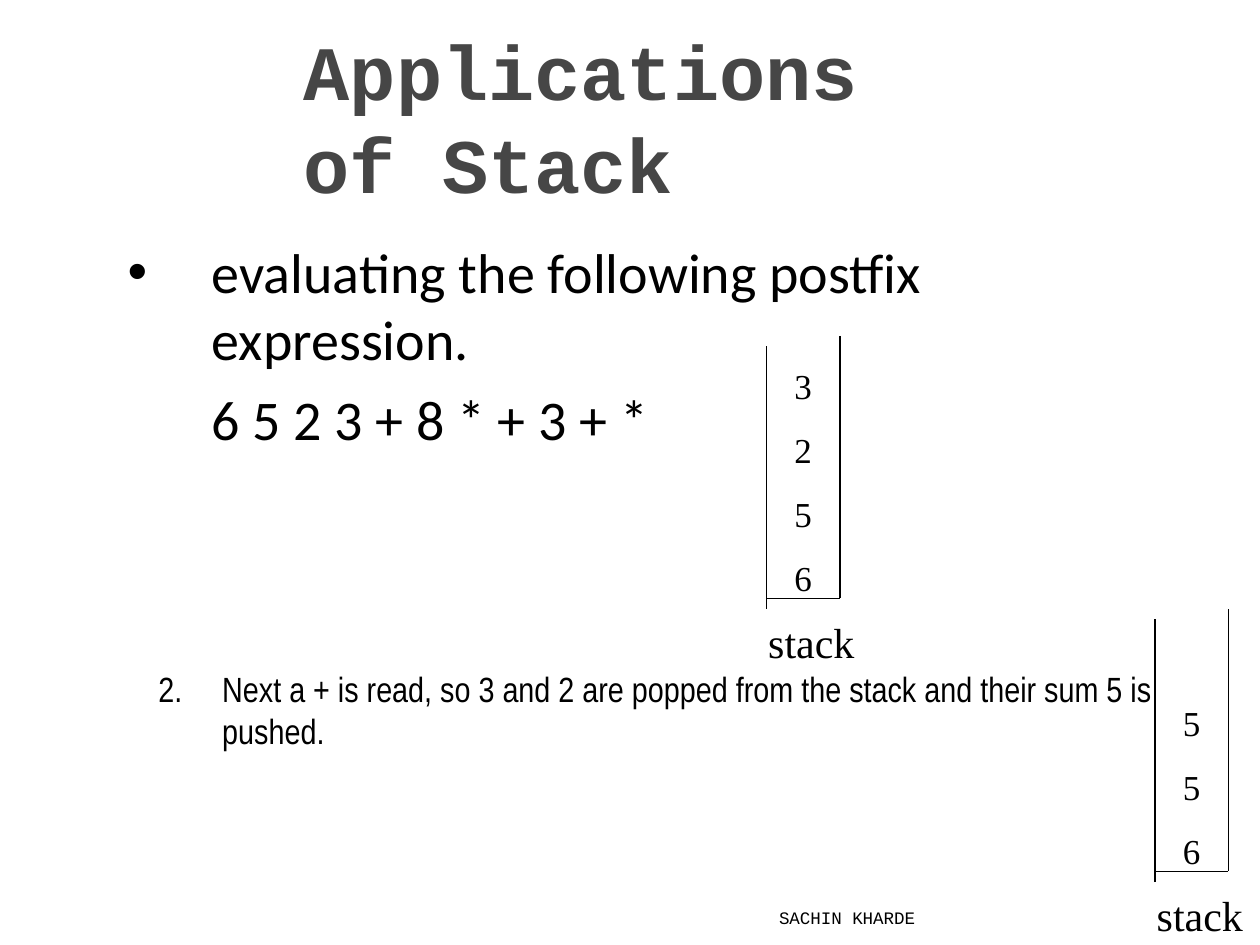
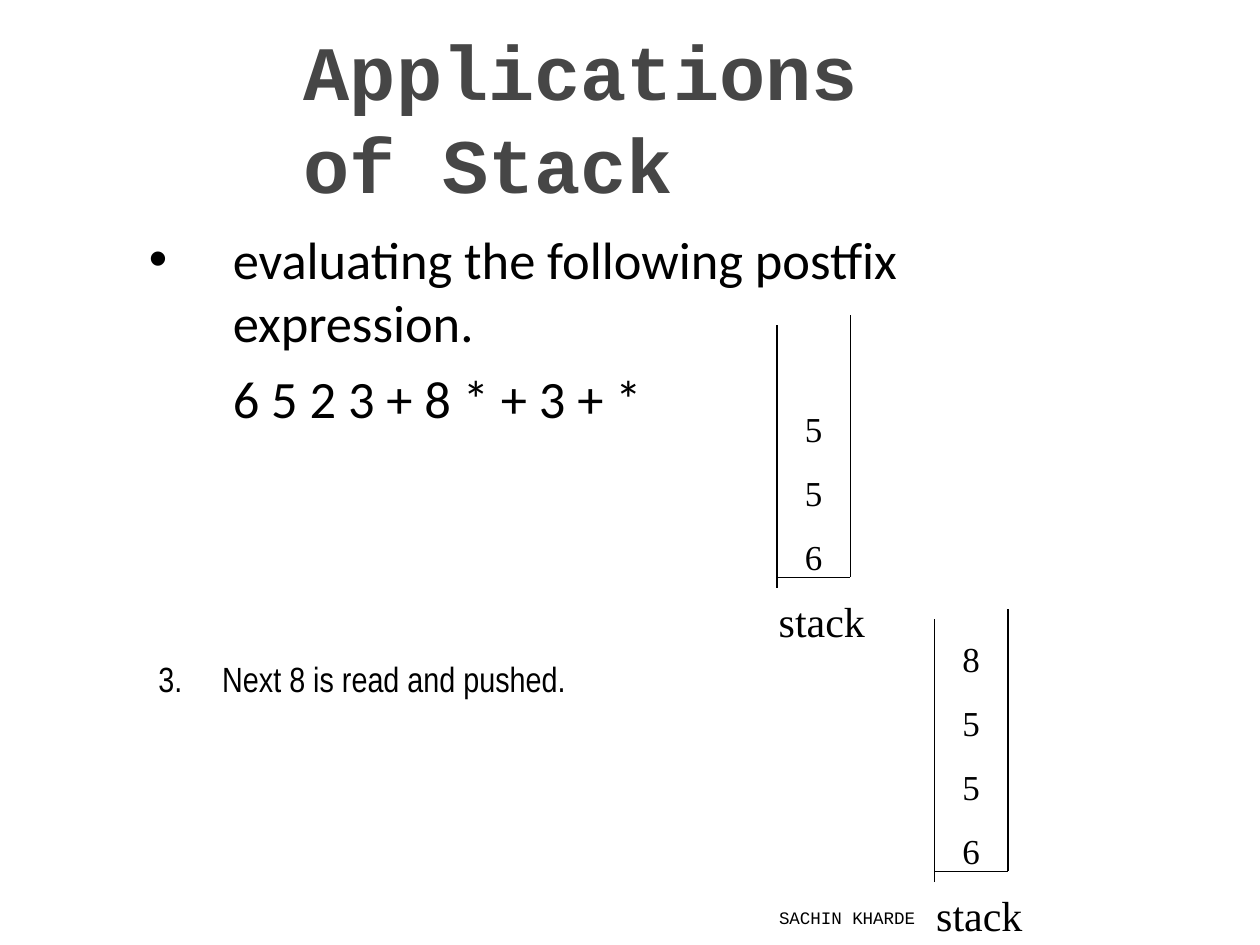
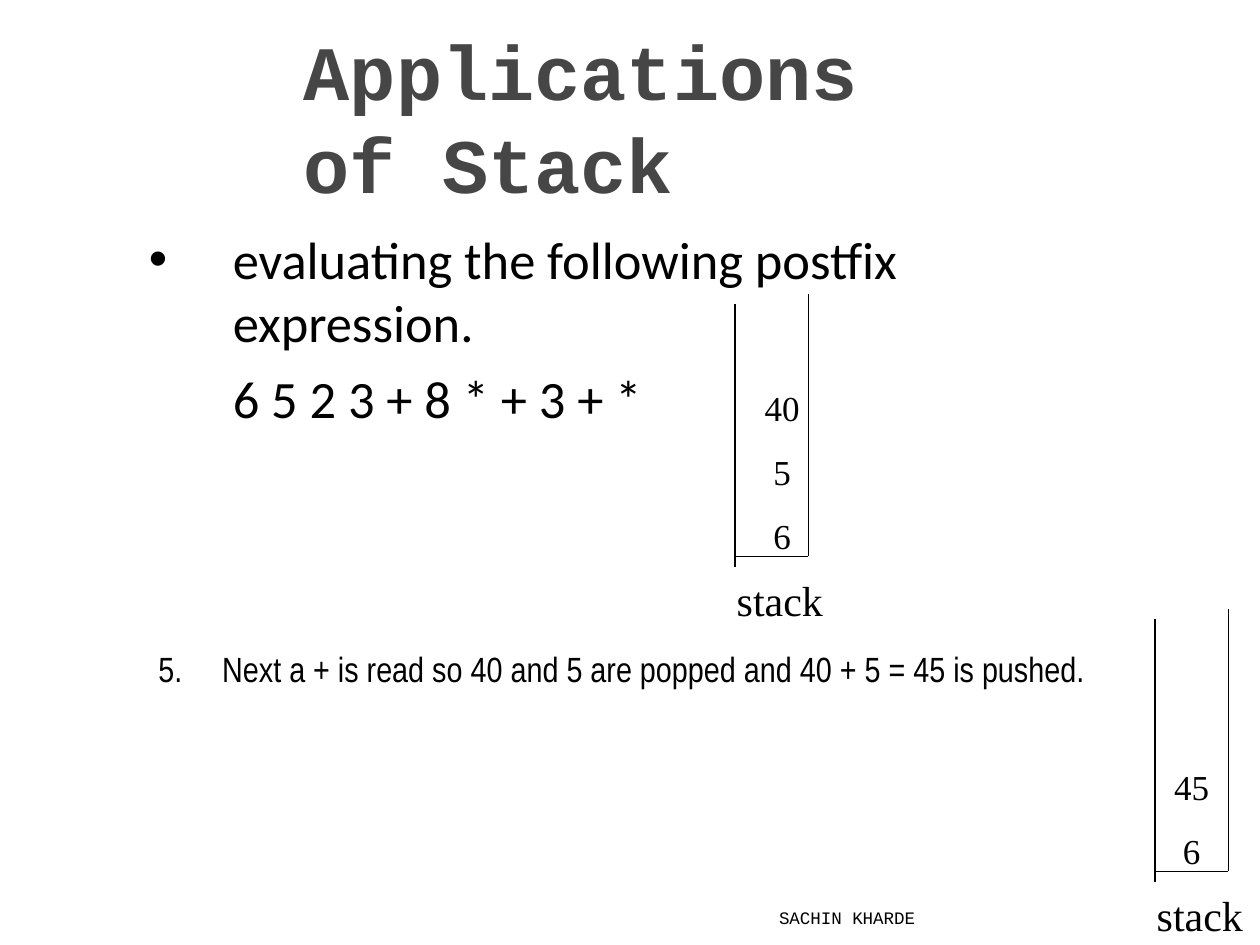
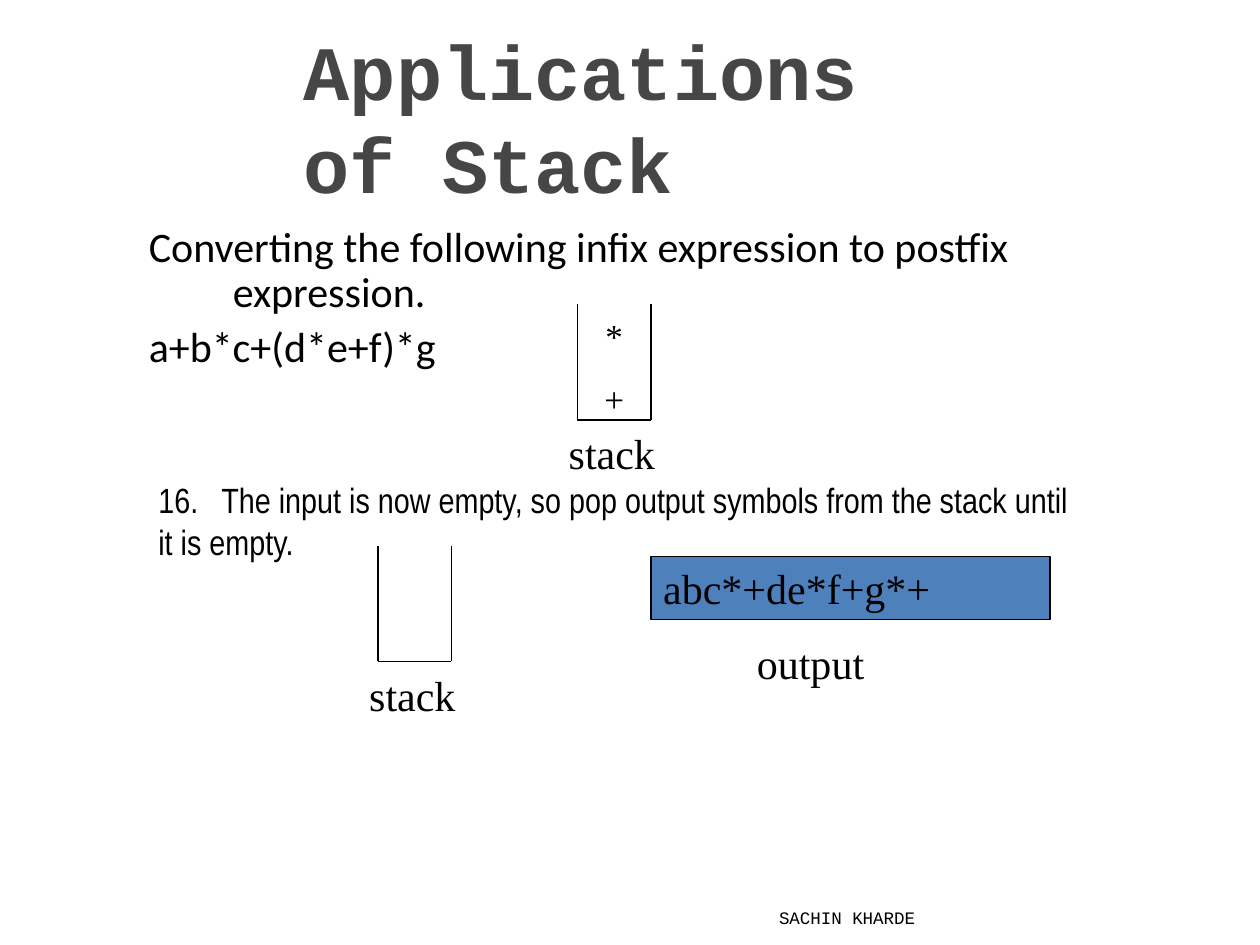
from dataclasses import dataclass

from lxml import etree
from pptx import Presentation
from pptx.dml.color import RGBColor
from pptx.enum.shapes import MSO_SHAPE as Preset
from pptx.enum.text import MSO_ANCHOR as Anchor, MSO_AUTO_SIZE as AutoSize, PP_ALIGN as Align
from pptx.oxml.ns import qn
from pptx.util import Pt


@dataclass(frozen=True)
class Theme:
    ink: RGBColor = RGBColor(0x00, 0x00, 0x00)
    heading: RGBColor = RGBColor(0x46, 0x46, 0x46)
    output_fill: RGBColor = RGBColor(0x4E, 0x80, 0xBC)
    mono: str = "Courier New"
    body: str = "Calibri"
    step: str = "Arial Narrow"
    diagram: str = "Times New Roman"
    title_size: int = 44
    label_size: int = 24
    item_size: int = 20
    footer_size: int = 10
    line: float = 0.75


THEME = Theme()
TITLE = "Applications of Stack"
AUTHOR = "SACHIN KHARDE"
POSTFIX_TASK = ["evaluating the following postfix expression.", "6 5 2 3 + 8 * + 3 + *"]
INFIX_TASK = ["Converting the following infix expression to postfix expression.", "a+b*c+(d*e+f)*g"]
HANGING = 48
STEP_TAB = 36.5
STACK_WIDTH = 42
ITEM_GAP = 12.5
FOOT = 6


def place(shape, left, top, width, height):
    shape.left, shape.top, shape.width, shape.height = map(Pt, (left, top, width, height))


def prepare_frame(frame, anchor=Anchor.TOP, inset=0):
    frame.word_wrap = True
    frame.auto_size = AutoSize.NONE
    frame.vertical_anchor = anchor
    frame.margin_left = frame.margin_right = Pt(inset)
    frame.margin_top = frame.margin_bottom = Pt(inset / 2)


def format_runs(paragraph, font_name, size, color=THEME.ink, bold=False):
    for run in paragraph.runs:
        run.font.name = font_name
        run.font.size = Pt(size)
        run.font.color.rgb = color
        run.font.bold = bold


def set_indent(paragraph, margin, first_line):
    properties = paragraph._p.get_or_add_pPr()
    properties.set("marL", str(Pt(margin)))
    properties.set("indent", str(Pt(first_line)))
    return properties


def add_label(slide, text, box, font_name, size, align=Align.LEFT, anchor=Anchor.TOP, inset=0):
    """Add a text box with one paragraph per line of text; return its paragraphs."""
    label = slide.shapes.add_textbox(*map(Pt, box))
    prepare_frame(label.text_frame, anchor, inset)
    label.text_frame.text = text
    for paragraph in label.text_frame.paragraphs:
        paragraph.alignment = align
        format_runs(paragraph, font_name, size)
    return label.text_frame.paragraphs


def add_titled_slide(prs):
    slide = prs.slides.add_slide(prs.slide_layouts[1])
    title = slide.shapes.title
    place(title, 173.5, 39, 373, 55)
    frame = title.text_frame
    prepare_frame(frame, Anchor.MIDDLE)
    frame.auto_size = AutoSize.SHAPE_TO_FIT_TEXT
    frame.text = TITLE
    frame.paragraphs[0].alignment = Align.LEFT
    format_runs(frame.paragraphs[0], THEME.mono, THEME.title_size, THEME.heading, bold=True)
    add_label(slide, AUTHOR, (345, 505, 185, 29), THEME.mono, THEME.footer_size,
              Align.RIGHT, Anchor.BOTTOM, inset=7.2)
    return slide


def fill_task(slide, lines, box, size, gap, bulleted=True, spacing=1.0):
    """Write the task and its expression; only a bulleted task starts with a bullet."""
    body = slide.placeholders[1]
    place(body, *box)
    prepare_frame(body.text_frame)
    body.text_frame.text = "\n".join(lines)
    for index, paragraph in enumerate(body.text_frame.paragraphs):
        paragraph.space_before = Pt(gap if index else 0)
        paragraph.line_spacing = spacing
        hangs = index == 0 or not bulleted
        properties = set_indent(paragraph, HANGING, -HANGING if hangs else 0)
        if index or not bulleted:
            etree.SubElement(properties, qn("a:buNone"))
        format_runs(paragraph, THEME.body, size)


def add_step(slide, number, text, top, width=568, hanging=True):
    [step] = add_label(slide, f"{number}.\t{text}", (90.5, top, width, 50),
                       THEME.step, THEME.item_size)
    margin = STEP_TAB if hanging else 0
    properties = set_indent(step, margin, -margin)
    tabs = etree.SubElement(properties, qn("a:tabLst"))
    etree.SubElement(tabs, qn("a:tab"), pos=str(Pt(STEP_TAB)), algn="l")


def add_stack(slide, left, top, items, height=150, foot=FOOT, item_shift=0):
    """Draw an open stack, its items from top to bottom, and its label.

    foot is how far the left wall sits below the right one.
    """
    right, base = left + STACK_WIDTH, top + height
    walls = [((left, base), (right, base)),
             ((right, top), (right, base)),
             ((left, base + foot), (left, top + foot))]
    outline = slide.shapes.build_freeform(Pt(left), Pt(base), scale=1.0)
    for start, end in walls:
        outline.move_to(*map(Pt, start))
        outline.add_line_segments([tuple(map(Pt, end))], close=False)
    stack = outline.convert_to_shape()
    stack.shadow.inherit = False
    stack.fill.background()
    stack.line.color.rgb = THEME.ink
    stack.line.width = Pt(THEME.line)

    if items:
        entries = add_label(slide, "\n".join(items), (left + item_shift, top, STACK_WIDTH, height),
                            THEME.diagram, THEME.item_size, Align.CENTER, Anchor.BOTTOM)
        for entry in entries[1:]:
            entry.space_before = Pt(ITEM_GAP)
    add_label(slide, "stack", (left + foot - 5, base + foot + 4.5, 52, 30),
              THEME.diagram, THEME.label_size)


def add_output(slide, text):
    output = slide.shapes.add_shape(Preset.RECTANGLE, Pt(372), Pt(318), Pt(228), Pt(36))
    output.shadow.inherit = False
    output.fill.solid()
    output.fill.fore_color.rgb = THEME.output_fill
    output.line.color.rgb = THEME.ink
    output.line.width = Pt(THEME.line)
    prepare_frame(output.text_frame, Anchor.MIDDLE, inset=7)
    output.text_frame.text = text
    output.text_frame.paragraphs[0].alignment = Align.LEFT
    format_runs(output.text_frame.paragraphs[0], THEME.diagram, THEME.label_size)
    add_label(slide, "output", (432.5, 364.5, 64, 30), THEME.diagram, THEME.label_size)


def build_addition(prs):
    slide = add_titled_slide(prs)
    fill_task(slide, POSTFIX_TASK, (73, 135.5, 480, 125), size=32, gap=7.5)
    add_stack(slide, 438, 192, "3256")
    add_step(slide, 2, "Next a + is read, so 3 and 2 are popped from the stack "
                       "and their sum 5 is pushed.", top=381.5)
    add_stack(slide, 660, 348, "556")


def build_push(prs):
    slide = add_titled_slide(prs)
    fill_task(slide, POSTFIX_TASK, (85, 129.5, 480, 118), size=30, gap=7.5)
    add_stack(slide, 444, 180, "556")
    add_step(slide, 3, "Next 8 is read and pushed.", top=376)
    add_stack(slide, 534, 348, "8556")


def build_second_addition(prs):
    slide = add_titled_slide(prs)
    fill_task(slide, POSTFIX_TASK, (85, 129.5, 480, 118), size=30, gap=7.5)
    add_stack(slide, 420, 168, ["40", "5", "6"], item_shift=6)
    add_step(slide, 5, "Next a + is read so 40 and 5 are popped and 40 + 5 = 45 is pushed.",
             top=370)
    add_stack(slide, 660, 348, ["45", "6"])


def build_conversion(prs):
    slide = add_titled_slide(prs)
    fill_task(slide, INFIX_TASK, (85, 130, 520, 90), size=24, gap=6, bulleted=False, spacing=0.88)
    add_stack(slide, 330, 174, "*+", height=66, foot=0)
    add_step(slide, 16, "The input is now empty, so pop output symbols from the stack "
                        "until it is empty.", top=273.5, width=525, hanging=False)
    add_stack(slide, 216, 312, "", height=66, foot=0)
    add_output(slide, "abc*+de*f+g*+")


def main():
    prs = Presentation()
    prs.slide_width, prs.slide_height = Pt(720), Pt(540)
    build_addition(prs)
    build_push(prs)
    build_second_addition(prs)
    build_conversion(prs)
    prs.save("out.pptx")


if __name__ == "__main__":
    main()
